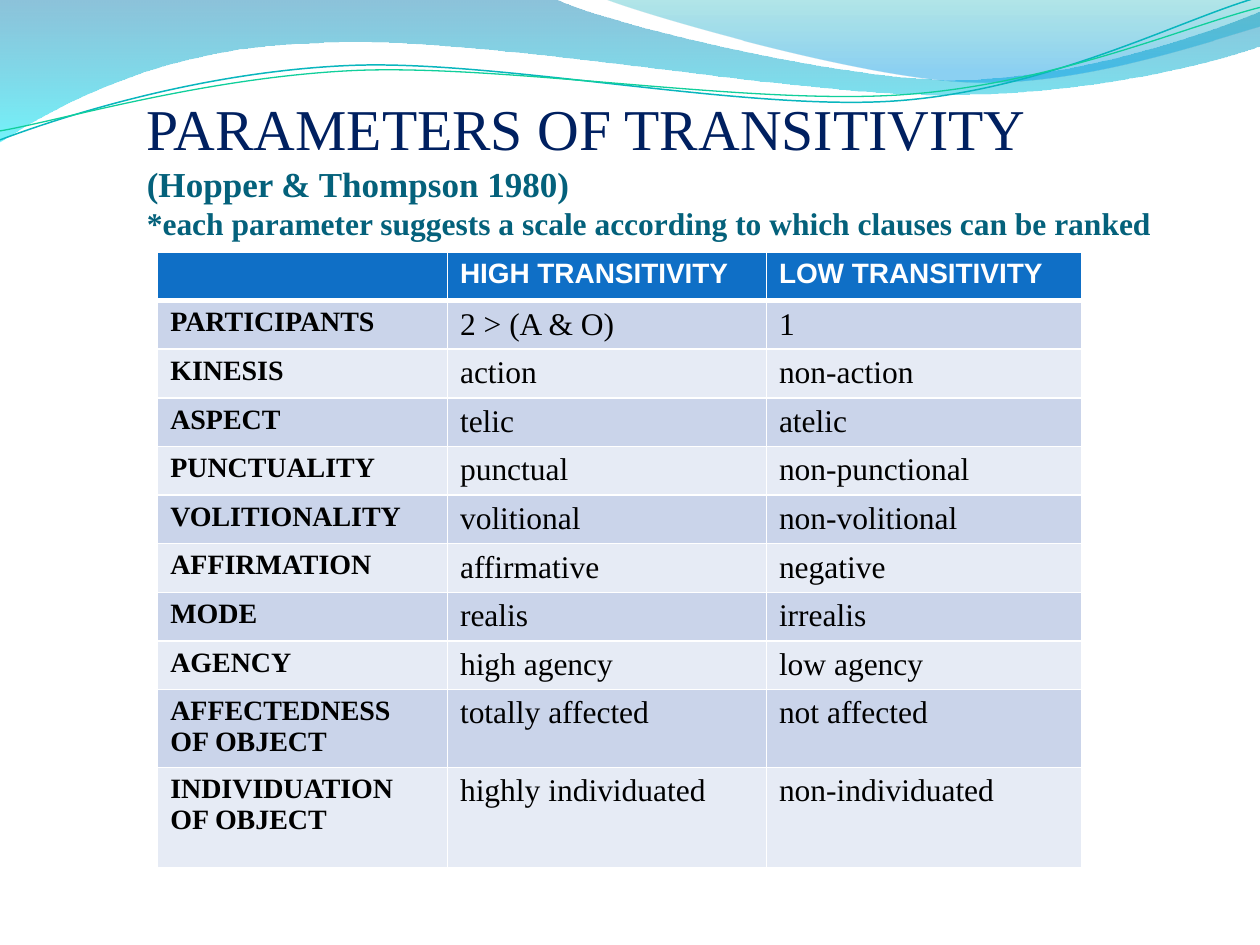
"""Build the slide on the parameters of transitivity."""
from dataclasses import dataclass
from math import cos, radians, sin
from typing import Optional

from lxml.etree import SubElement
from pptx import Presentation
from pptx.dml.color import RGBColor
from pptx.enum.text import MSO_ANCHOR, MSO_AUTO_SIZE, PP_ALIGN
from pptx.oxml import parse_xml
from pptx.oxml.ns import nsdecls, qn
from pptx.util import Cm, Pt

WHITE = RGBColor(0xFF, 0xFF, 0xFF)
BLACK = RGBColor(0x00, 0x00, 0x00)
NAVY = RGBColor(0x00, 0x20, 0x60)
TEAL = RGBColor(0x04, 0x61, 0x7B)
HEADER_BLUE = RGBColor(0x0F, 0x6F, 0xC6)
BAND_DARK = RGBColor(0xCA, 0xD4, 0xEA)
BAND_LIGHT = RGBColor(0xE6, 0xEB, 0xF5)
DEEP_BLUE = RGBColor(0x00, 0x79, 0xAD)
CYAN = RGBColor(0x00, 0xE9, 0xF7)
SEA_GREEN = RGBColor(0x00, 0xAB, 0xB4)
SKY_BLUE = RGBColor(0x00, 0x99, 0xE4)
LINE_TEAL = RGBColor(0x09, 0xB6, 0xBE)
LINE_GREEN = RGBColor(0x10, 0xCF, 0x9B)
SERIF = "Times New Roman"
SANS = "Arial"
LINE_TILT = 2.7


@dataclass
class GradientStop:
    position: int
    color: RGBColor
    opacity: int


@dataclass
class Wave:
    start: tuple
    segments: list
    stops: tuple = ()
    line_color: Optional[RGBColor] = None
    line_width: float = 0
    center: tuple = (0, 0)


@dataclass
class TextStyle:
    font: str
    size: int
    color: RGBColor
    bold: bool


HEADER_STYLE = TextStyle(SANS, 16, WHITE, True)
LABEL_STYLE = TextStyle(SERIF, 16, BLACK, True)
VALUE_STYLE = TextStyle(SERIF, 18, BLACK, False)
HEADING_STYLE = TextStyle(SERIF, 33, NAVY, False)
CITATION_STYLE = TextStyle(SERIF, 20, TEAL, True)
REMARK_STYLE = TextStyle(SERIF, 18, TEAL, True)

WAVES = [
    Wave((0, 0), [
        (11.18, -0.03), (12.09, 0.43, 16.87, 1.6, 19.25, 1.6),
        (21.67, 1.6, 24.33, 0.66, 25.4, 0.23), (25.43, 0.91),
        (24.97, 1.12, 22.1, 1.93, 18.95, 1.91),
        (15.8, 1.91, 9.7, 0.71, 6.53, 0.86),
        (3.28, 0.91, 1.17, 2.11, -0.03, 2.87), (0, 0)],
        stops=(GradientStop(0, DEEP_BLUE, 45), GradientStop(100, CYAN, 55))),
    Wave((12.17, -0.03), [
        (12.93, 0.28, 17.32, 1.57, 19.53, 1.65),
        (21.74, 1.75, 24.41, 0.81, 25.4, 0.53), (25.4, 0), (12.17, -0.03)],
        stops=(GradientStop(0, SEA_GREEN, 30), GradientStop(80, SKY_BLUE, 45),
               GradientStop(100, SKY_BLUE, 45))),
    Wave((0, 2.82), [
        (1.22, 2.36, 4.01, 1.45, 7.04, 1.32),
        (10.03, 1.19, 15.06, 2.26, 18.11, 2.03),
        (21.16, 1.8, 23.83, 0.38, 25.35, -0.05)],
        line_color=LINE_TEAL, line_width=0.85, center=(12.67, 1.46)),
    Wave((0, 2.64), [
        (1.19, 2.44, 4.17, 1.55, 7.19, 1.42),
        (10.24, 1.3, 15.16, 2.13, 18.21, 1.91),
        (21.23, 1.7, 23.9, 0.53, 25.4, 0.15)],
        line_color=LINE_GREEN, line_width=0.75, center=(12.69, 1.5)),
]

TABLE_ROWS = [
    ("", "HIGH TRANSITIVITY", "LOW TRANSITIVITY"),
    ("PARTICIPANTS", "2 > (A & O)", "1"),
    ("KINESIS", "action", "non-action"),
    ("ASPECT", "telic", "atelic"),
    ("PUNCTUALITY", "punctual", "non-punctional"),
    ("VOLITIONALITY", "volitional", "non-volitional"),
    ("AFFIRMATION", "affirmative", "negative"),
    ("MODE", "realis", "irrealis"),
    ("AGENCY", "high agency", "low agency"),
    ("AFFECTEDNESS OF OBJECT", "totally affected", "not affected"),
    ("INDIVIDUATION OF OBJECT", "highly individuated", "non-individuated"),
]
COLUMN_WIDTHS = [5.84, 6.43, 6.35]
ROW_HEIGHTS = [0.98] * 9 + [1.57, 2.03]


def turn_point(point: tuple, center: tuple, degrees: float) -> tuple:
    angle = radians(degrees)
    across, down = point[0] - center[0], point[1] - center[1]
    return (center[0] + across * cos(angle) - down * sin(angle),
            center[1] + across * sin(angle) + down * cos(angle))


def bend_segments(shape, segments: list) -> None:
    lines = iter(list(shape._element.iter(qn("a:lnTo"))))
    for segment in segments:
        first = next(lines)
        if len(segment) == 2:
            continue
        curve = parse_xml(f'<a:cubicBezTo {nsdecls("a")}/>')
        first.addprevious(curve)
        for line in (first, next(lines), next(lines)):
            curve.append(line[0])
            line.getparent().remove(line)


def gradient_fill(stops: tuple):
    stop_xml = "".join(
        f'<a:gs pos="{stop.position * 1000}"><a:srgbClr val="{stop.color}">'
        f'<a:alpha val="{stop.opacity * 1000}"/></a:srgbClr></a:gs>' for stop in stops)
    return parse_xml(f'<a:gradFill {nsdecls("a")}><a:gsLst>{stop_xml}</a:gsLst>'
                     '<a:lin ang="5400000" scaled="0"/></a:gradFill>')


def draw_wave(slide, wave: Wave) -> None:
    points = [wave.start]
    for segment in wave.segments:
        points.extend(zip(segment[::2], segment[1::2]))
    if wave.line_color:
        points = [turn_point(point, wave.center, LINE_TILT) for point in points]
    first, *rest = [(Cm(across), Cm(down)) for across, down in points]
    builder = slide.shapes.build_freeform(*first)
    builder.add_line_segments(rest, close=not wave.line_color)
    shape = builder.convert_to_shape()
    bend_segments(shape, wave.segments)
    shape.shadow.inherit = False
    shape.fill.background()
    if wave.line_color:
        shape.rotation = 360 - LINE_TILT
        shape.line.color.rgb = wave.line_color
        shape.line.width = Pt(wave.line_width)
    else:
        shape.line.fill.background()
        properties = shape._element.spPr
        properties.replace(properties.find(qn("a:noFill")), gradient_fill(wave.stops))


def add_run(paragraph, text: str, style: TextStyle) -> None:
    run = paragraph.add_run()
    run.text = text
    run.font.name = style.font
    run.font.size = Pt(style.size)
    run.font.bold = style.bold
    run.font.color.rgb = style.color


def fill_title(slide) -> None:
    title = slide.shapes.title
    slide.shapes._spTree.append(title._element)
    title.left, title.top, title.width, title.height = Cm(2.96), Cm(1.07), Cm(20.4), Cm(3.81)
    frame = title.text_frame
    frame.word_wrap = True
    frame.auto_size = MSO_AUTO_SIZE.NONE
    frame.vertical_anchor = MSO_ANCHOR.BOTTOM
    frame.margin_left = frame.margin_right = frame.margin_bottom = 0
    paragraph = frame.paragraphs[0]
    paragraph.alignment = PP_ALIGN.LEFT
    add_run(paragraph, "PARAMETERS OF TRANSITIVITY ", HEADING_STYLE)
    add_run(paragraph, "(Hopper & Thompson 1980)", CITATION_STYLE)
    paragraph.add_line_break()
    SubElement(paragraph._p.find(qn("a:br")), qn("a:rPr"), sz=str(CITATION_STYLE.size * 100))
    add_run(paragraph, "*each parameter suggests a scale according to which clauses can be ranked",
            REMARK_STYLE)


def underline_header(cell) -> None:
    border = parse_xml(f'<a:lnB {nsdecls("a")} w="{Pt(3)}"><a:solidFill>'
                       f'<a:srgbClr val="{WHITE}"/></a:solidFill></a:lnB>')
    cell._tc.get_or_add_tcPr().insert(0, border)


def draw_table(slide) -> None:
    table = slide.shapes.add_table(
        len(TABLE_ROWS), len(COLUMN_WIDTHS), Cm(3.18), Cm(5.08),
        Cm(sum(COLUMN_WIDTHS)), Cm(sum(ROW_HEIGHTS))).table
    for column, width in zip(table.columns, COLUMN_WIDTHS):
        column.width = Cm(width)
    for row_index, texts in enumerate(TABLE_ROWS):
        table.rows[row_index].height = Cm(ROW_HEIGHTS[row_index])
        band = BAND_DARK if row_index % 2 else BAND_LIGHT
        for column_index, text in enumerate(texts):
            cell = table.cell(row_index, column_index)
            cell.fill.solid()
            cell.fill.fore_color.rgb = band if row_index else HEADER_BLUE
            if row_index == 0:
                underline_header(cell)
            body_style = VALUE_STYLE if column_index else LABEL_STYLE
            style = body_style if row_index else HEADER_STYLE
            paragraph = cell.text_frame.paragraphs[0]
            if text:
                add_run(paragraph, text, style)
            else:
                SubElement(paragraph._p, qn("a:endParaRPr"), sz=str(style.size * 100))


def main() -> None:
    presentation = Presentation()
    presentation.slide_width, presentation.slide_height = Cm(25.4), Cm(19.05)
    slide = presentation.slides.add_slide(presentation.slide_layouts[5])
    for wave in WAVES:
        draw_wave(slide, wave)
    fill_title(slide)
    draw_table(slide)
    presentation.save("out.pptx")


if __name__ == "__main__":
    main()
